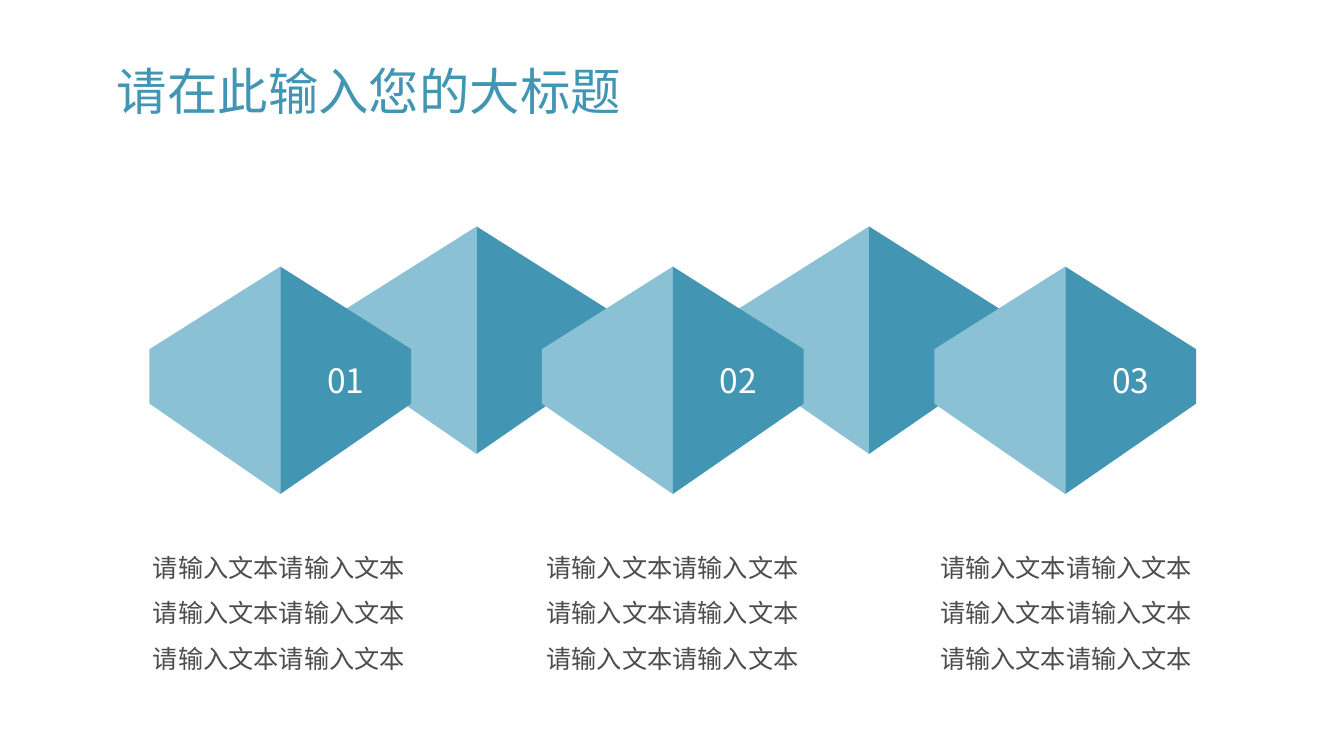
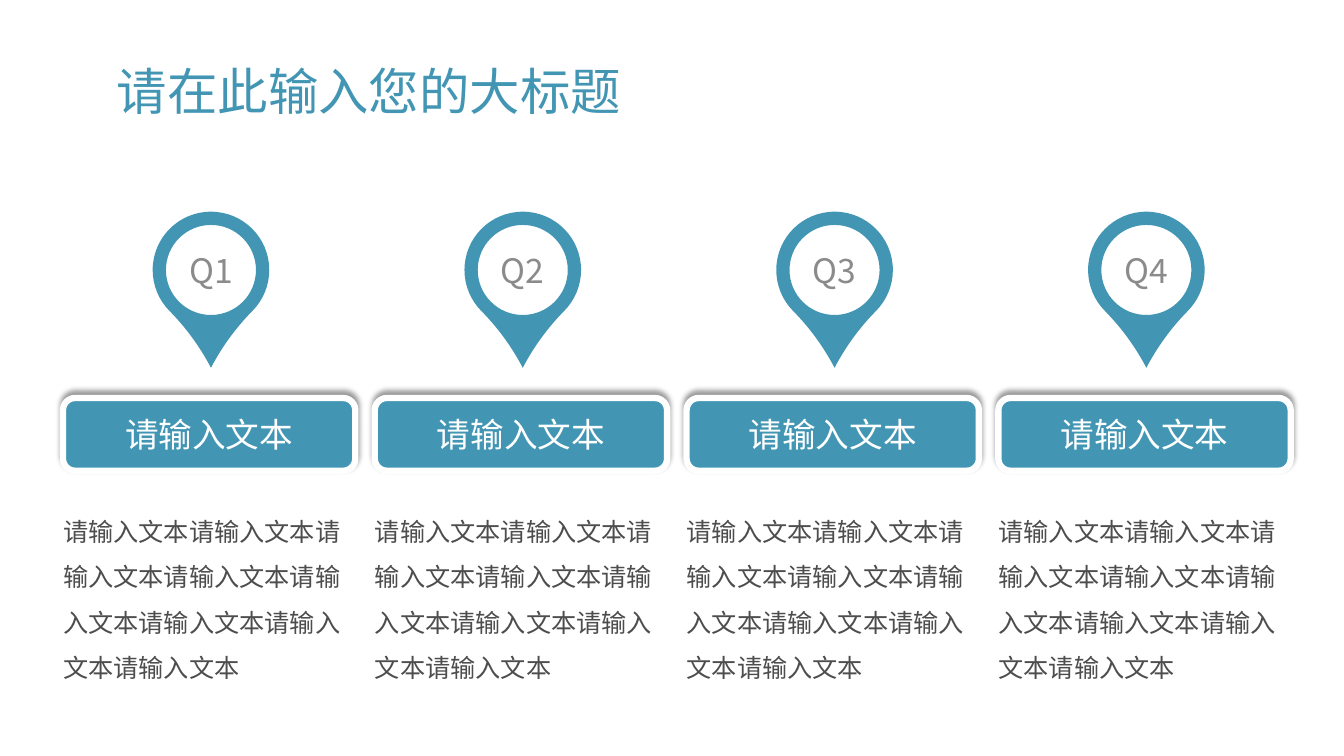
"""Build two infographic slides on a grid of 80 columns by 45 rows."""
import dataclasses
import math

import lxml.etree
import pptx
import pptx.dml.color
import pptx.enum.shapes
import pptx.enum.text
import pptx.oxml.ns
import pptx.util

COLUMNS, ROWS = 80, 45
CELL = pptx.util.Inches(7.5) // ROWS
ALIGN = pptx.enum.text.PP_ALIGN
PHRASE = "请输入文本"


@dataclasses.dataclass(frozen=True)
class Theme:
    """Colours, font and type sizes of the deck."""

    main: str = "4296B4"
    light: str = "8BC1D5"
    white: str = "FFFFFF"
    body: str = "4D4D4D"
    quiet: str = "8B8B8B"
    shadow: str = "000000"
    font: str = "Noto Sans CJK SC"
    title_size: int = 36
    label_size: int = 24
    body_size: int = 18


THEME = Theme()


def cells(count):
    """Convert a number of grid cells to a length."""
    return pptx.util.Emu(round(count * CELL))


def color(value):
    """Convert a hexadecimal string to a colour."""
    return pptx.dml.color.RGBColor.from_string(value)


def write(shape, text, size, ink, align=ALIGN.CENTER, spacing=None):
    """Write one middle-anchored paragraph into a shape."""
    frame = shape.text_frame
    frame.word_wrap = True
    frame.auto_size = pptx.enum.text.MSO_AUTO_SIZE.NONE
    frame.vertical_anchor = pptx.enum.text.MSO_ANCHOR.MIDDLE
    paragraph = frame.paragraphs[0]
    paragraph.alignment = align
    paragraph.line_spacing = spacing
    run = paragraph.add_run()
    run.text = text
    run.font.size = pptx.util.Pt(size)
    run.font.color.rgb = color(ink)
    run.font.name = THEME.font
    east_asian = lxml.etree.SubElement(run.font._element, pptx.oxml.ns.qn("a:ea"))
    east_asian.set("typeface", THEME.font)


def add_titled_slide(presentation, title):
    """Add a title-only slide with the shared title style."""
    slide = presentation.slides.add_slide(presentation.slide_layouts[5])
    shape = slide.shapes.title
    shape.left, shape.top = cells(6.36), cells(2.83)
    shape.width, shape.height = cells(63.54), cells(5.58)
    write(shape, title, THEME.title_size, THEME.main, ALIGN.LEFT, 0.9)
    return slide


def add_outline(slide, contours, fill):
    """Add a filled freeform made of closed contours in grid cells."""
    scaled = [[(cells(x), cells(y)) for x, y in contour] for contour in contours]
    builder = slide.shapes.build_freeform(*scaled[0][0], scale=1.0)
    for index, (start, *points) in enumerate(scaled):
        if index:
            builder.move_to(*start)
        builder.add_line_segments(points, close=True)
    shape = builder.convert_to_shape()
    shape.shadow.inherit = False
    shape.fill.solid()
    shape.fill.fore_color.rgb = color(fill)
    shape.line.fill.background()
    return shape


def bend(shape):
    """Turn each three line segments of a freeform into one cubic curve."""
    segments = list(shape._element.iter(pptx.oxml.ns.qn("a:lnTo")))
    for index in range(0, len(segments), 3):
        curve = lxml.etree.Element(pptx.oxml.ns.qn("a:cubicBezTo"))
        segments[index].addprevious(curve)
        for segment in segments[index:index + 3]:
            curve.append(segment[0])
            segment.getparent().remove(segment)


def add_gem(slide, center, top, label=None):
    """Add a two-tone gem, with a label on its right half if given."""
    profile = [(1, 4.92), (1, 8.16), (0, 13.54), (0, 0), (1, 4.92)]
    for side, fill in ((-1, THEME.light), (1, THEME.main)):
        points = [(center + side * 7.79 * x, top + y) for x, y in profile]
        half = add_outline(slide, [points], fill)
    if label:
        frame = half.text_frame
        frame.margin_left = frame.margin_right = cells(0.43)
        frame.margin_top = frame.margin_bottom = cells(0.22)
        write(half, label, THEME.label_size, THEME.white)


def add_body(slide, left, top, width, height, repeats, align=None):
    """Add a block of body text."""
    box = slide.shapes.add_textbox(cells(left), cells(top), cells(width), cells(height))
    write(box, PHRASE * repeats, THEME.body_size, THEME.body, align, 1.5)


def arc(radius, *angles):
    """List curve points of an arc through the given angles in degrees."""
    stops = [math.radians(angle) for angle in angles]
    points = [(radius * math.cos(stops[0]), radius * math.sin(stops[0]))]
    for start, end in zip(stops, stops[1:]):
        pull = 4 / 3 * math.tan((end - start) / 4)
        for angle, handle in ((start, pull), (end, -pull), (end, 0)):
            points.append((radius * (math.cos(angle) - handle * math.sin(angle)),
                           radius * (math.sin(angle) + handle * math.cos(angle))))
    return points


def add_pin(slide, x, y, label):
    """Add a map pin with a round hole and a label in it."""
    taper = [(1.5, 3.42), (0.66, 4.56), (0, 5.82)]
    rim = arc(3.47, 135, 180, 270, 360, 405)
    back = [(-dx, dy) for dx, dy in reversed(taper[:-1])]
    hole = arc(2.68, 270, 180, 90, 0, -90)
    contours = [[(x + dx, y + dy) for dx, dy in contour]
                for contour in (hole, rim + taper + back + rim[:1])]
    pin = add_outline(slide, contours, THEME.main)
    bend(pin)
    frame = pin.text_frame
    frame.margin_top, frame.margin_bottom = 0, cells(2.34)
    write(pin, label, THEME.label_size, THEME.quiet)


def add_shadow(shape):
    """Give a shape a soft shadow above it."""
    shape.shadow.inherit = False
    effects = shape._element.spPr.find(pptx.oxml.ns.qn("a:effectLst"))
    shadow = lxml.etree.SubElement(
        effects, pptx.oxml.ns.qn("a:outerShdw"), blurRad=str(pptx.util.Pt(4)),
        dist=str(pptx.util.Pt(3)), dir=str(270 * 60000), algn="b", rotWithShape="0")
    tint = lxml.etree.SubElement(shadow, pptx.oxml.ns.qn("a:srgbClr"), val=THEME.shadow)
    lxml.etree.SubElement(tint, pptx.oxml.ns.qn("a:alpha"), val="40000")


def add_card(slide, left, text):
    """Add a rounded heading card with a white border."""
    card = slide.shapes.add_shape(
        pptx.enum.shapes.MSO_SHAPE.ROUNDED_RECTANGLE,
        cells(left), cells(23.69), cells(17.4), cells(4.33))
    card.fill.solid()
    card.fill.fore_color.rgb = color(THEME.main)
    card.line.color.rgb = color(THEME.white)
    card.line.width = pptx.util.Pt(4.5)
    add_shadow(card)
    write(card, text, THEME.label_size, THEME.white)


def build_gems(slide):
    """Lay out three labelled gems before two plain ones."""
    first, pitch, count = 16.69, 23.36, 3
    for index in range(count):
        center = first + pitch * index
        if index < count - 1:
            add_gem(slide, center + pitch / 2, 13.48)
        add_gem(slide, center, 15.87, f"{index + 1:02}")
    for index in range(count):
        add_body(slide, 8.47 + 23.43 * index, 30.45, 16.26, 11.16, 6, ALIGN.CENTER)


def build_quarters(slide):
    """Lay out four columns of pin, heading and text."""
    for index in range(4):
        left = 3.75 + 18.56 * index
        add_pin(slide, left + 8.81, 16.07, f"Q{index + 1}")
        add_card(slide, left, PHRASE)
        add_body(slide, left - 0.58, 28.6, 18, 13.26, 8)


def main():
    """Build and save the presentation."""
    presentation = pptx.Presentation()
    presentation.slide_width = cells(COLUMNS)
    presentation.slide_height = cells(ROWS)
    for build in (build_gems, build_quarters):
        build(add_titled_slide(presentation, "请在此输入您的大标题"))
    presentation.save("out.pptx")


if __name__ == "__main__":
    main()
